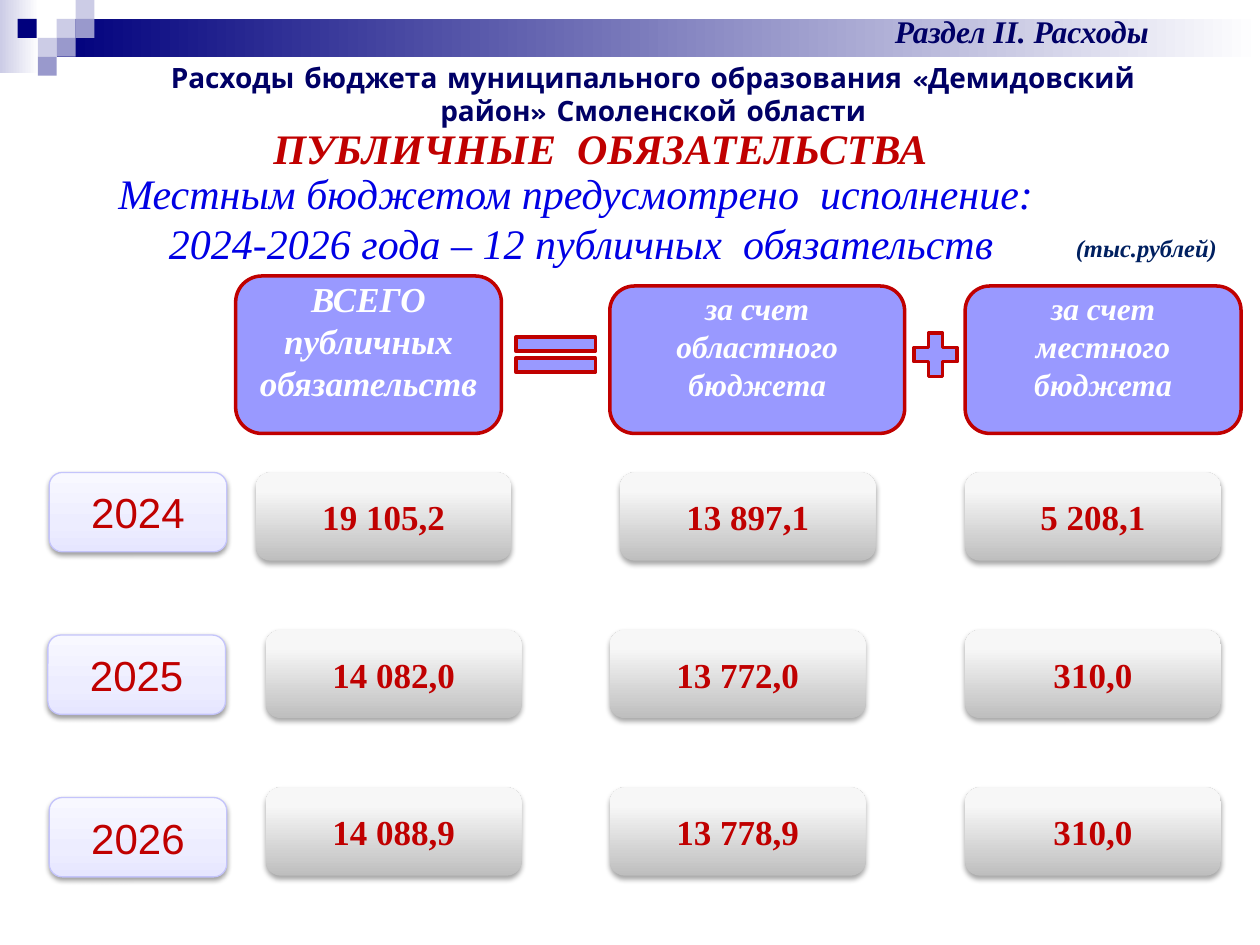
"""Build the slide on public obligations of the district budget."""
from lxml.etree import SubElement
from pptx import Presentation
from pptx.dml.color import RGBColor
from pptx.enum.shapes import MSO_SHAPE as Shape
from pptx.enum.text import MSO_ANCHOR as Anchor, PP_ALIGN as Align
from pptx.oxml.ns import qn
from pptx.util import Inches, Pt

SERIF = "Times New Roman"
RED, NAVY, LILAC, WHITE = "C00000", "000066", "9999FF", "FFFFFF"
DARK, MIDDLE, PALE = "00007D", "9999CC", "CCCCE6"
GREY_STOPS = [(0, "BEBEBE"), (80, "F7F7F7"), (100, "F8F8F8")]
YEAR_STOPS = [(0, "E6E6FF"), (35, "EDEDFF"), (100, "F8F8FF")]

BANDS = [((0, 0, 0.31, 0.58), PALE), ((0.45, 0.15, 9.55, 0.3), DARK)]
SQUARE = 0.15
SQUARES = [(0.45, 0.15, PALE), (0.6, 0, PALE), (0.6, 0.15, MIDDLE), (0.3, 0.3, PALE),
           (0.14, 0.15, DARK), (0.45, 0.3, MIDDLE), (0.3, 0.45, MIDDLE)]

TEXTS = [
    ((0.86, 0.92, 7.81, 0.5), ["ПУБЛИЧНЫЕ  ОБЯЗАТЕЛЬСТВА"],
     dict(size=24, color=RED, bold=True, italic=True)),
    ((0.12, 1.28, 8.98, 0.91),
     ["Местным бюджетом предусмотрено  исполнение: ",
      "2024-2026 года – 12 публичных  обязательств"],
     dict(size=24, color="0000E4", italic=True)),
    ((8.44, 1.8, 1.33, 0.34), ["(тыс.рублей)"],
     dict(size=14, color="002060", bold=True, italic=True, align=Align.LEFT, wrap=False)),
    ((6.26, 0.05, 3.7, 0.4), ["Раздел II. Расходы"],
     dict(size=18, color=NAVY, bold=True, italic=True)),
    ((0.94, 0.43, 8.49, 0.37),
     ["Расходы бюджета муниципального образования «Демидовский район» Смоленской области"],
     dict(size=16, color=NAVY, bold=True, font="Comic Neue")),
]

HEADERS = [
    ((1.87, 2.19, 2.11, 1.25), ["ВСЕГО", "публичных", "обязательств"], 20),
    ((4.84, 2.27, 2.34, 1.17), ["за счет областного бюджета"], 18),
    ((7.66, 2.27, 2.19, 1.17), ["за счет местного", "бюджета"], 18),
]
SIGNS = [(Shape.MATH_EQUAL, (3.98, 2.58, 0.86, 0.47)),
         (Shape.MATH_PLUS, (7.19, 2.58, 0.47, 0.47))]

FIRST_ROW_LEFTS, OTHER_ROW_LEFTS = (2.03, 4.92, 7.66), (2.11, 4.84, 7.66)
ROWS = [
    ("2024", 0.39, FIRST_ROW_LEFTS, ("19 105,2", "13 897,1", "5 208,1")),
    ("2025", 0.38, OTHER_ROW_LEFTS, ("14 082,0", "13 772,0", "310,0")),
    ("2026", 0.39, OTHER_ROW_LEFTS, ("14 088,9", "13 778,9", "310,0")),
]
ROWS_TOP, YEAR_STEP, VALUE_STEP = 3.75, 1.29, 1.25


def rgb(value):
    """Turn a hex string into a colour."""
    return RGBColor.from_string(value)


def write(shape, lines, size, color, bold=False, italic=False, font=SERIF,
          align=Align.CENTER, anchor=Anchor.TOP, wrap=True):
    """Write lines as paragraphs of one format."""
    frame = shape.text_frame
    frame.word_wrap = wrap
    frame.vertical_anchor = anchor
    frame.text = "\n".join(lines)
    for paragraph in frame.paragraphs:
        paragraph.alignment = align
        style = paragraph.runs[0].font
        style.name, style.size = font, Pt(size)
        style.bold, style.italic = bold, italic
        style.color.rgb = rgb(color)


def add_color(parent, value):
    """Add a colour element to a gradient stop or a shadow."""
    return SubElement(parent, qn("a:srgbClr"), val=value)


def paint_gradient(shape, stops, angle):
    """Fill a shape with a linear gradient."""
    shape.fill.gradient()
    shape.fill.gradient_angle = angle
    stop_list = shape._element.spPr.find(".//" + qn("a:gsLst"))
    for stop in list(stop_list):
        stop_list.remove(stop)
    for position, color in stops:
        add_color(SubElement(stop_list, qn("a:gs"), pos=str(position * 1000)), color)


def add_shadow(shape, distance, opacity):
    """Give a shape a soft shadow below it."""
    effects = shape._element.spPr.find(qn("a:effectLst"))
    shadow = SubElement(effects, qn("a:outerShdw"), blurRad=str(Pt(3.1)),
                        dist=str(Pt(distance)), dir="5400000", rotWithShape="0")
    SubElement(add_color(shadow, "000000"), qn("a:alpha"), val=str(opacity * 1000))


def add_shape(slide, kind, box, fill, line=None, width=2, angle=90):
    """Add a shape with a plain or gradient fill."""
    shape = slide.shapes.add_shape(kind, *map(Inches, box))
    shape.shadow.inherit = False
    if isinstance(fill, str):
        shape.fill.solid()
        shape.fill.fore_color.rgb = rgb(fill)
    else:
        paint_gradient(shape, fill, angle)
    if line:
        shape.line.color.rgb = rgb(line)
        shape.line.width = Pt(width)
    else:
        shape.line.fill.background()
    return shape


presentation = Presentation()
presentation.slide_width, presentation.slide_height = Inches(10), Inches(7.5)
slide = presentation.slides.add_slide(presentation.slide_layouts[6])

for box, color in BANDS:
    add_shape(slide, Shape.RECTANGLE, box, [(0, color), (100, WHITE)], angle=0)
for left, top, color in SQUARES:
    add_shape(slide, Shape.RECTANGLE, (left, top, SQUARE, SQUARE), color)

for box, lines, size in HEADERS:
    header = add_shape(slide, Shape.ROUNDED_RECTANGLE, box, LILAC, line=RED)
    write(header, lines, size, WHITE, bold=True, italic=True, anchor=Anchor.MIDDLE)
    header.text_frame.margin_top, header.text_frame.margin_bottom = 0, Inches(0.22)
for kind, box in SIGNS:
    add_shape(slide, kind, box, LILAC, line=RED)

for index, (year, year_left, lefts, values) in enumerate(ROWS):
    year_box = (year_left, ROWS_TOP + index * YEAR_STEP, 1.41, 0.63)
    label = add_shape(slide, Shape.ROUNDED_RECTANGLE, year_box, YEAR_STOPS,
                      line="C4C4FB", width=0.75)
    add_shadow(label, 1.6, 38)
    write(label, [year], 24, RED, font="Arial", anchor=Anchor.MIDDLE)
    for left, value in zip(lefts, values):
        value_box = (left, ROWS_TOP + index * VALUE_STEP, 2.03, 0.7)
        cell = add_shape(slide, Shape.ROUNDED_RECTANGLE, value_box, GREY_STOPS)
        add_shadow(cell, 1.8, 35)
        write(cell, [value], 20, RED, bold=True, anchor=Anchor.MIDDLE)

for box, lines, style in TEXTS:
    write(slide.shapes.add_textbox(*map(Inches, box)), lines, **style)

presentation.save("out.pptx")
